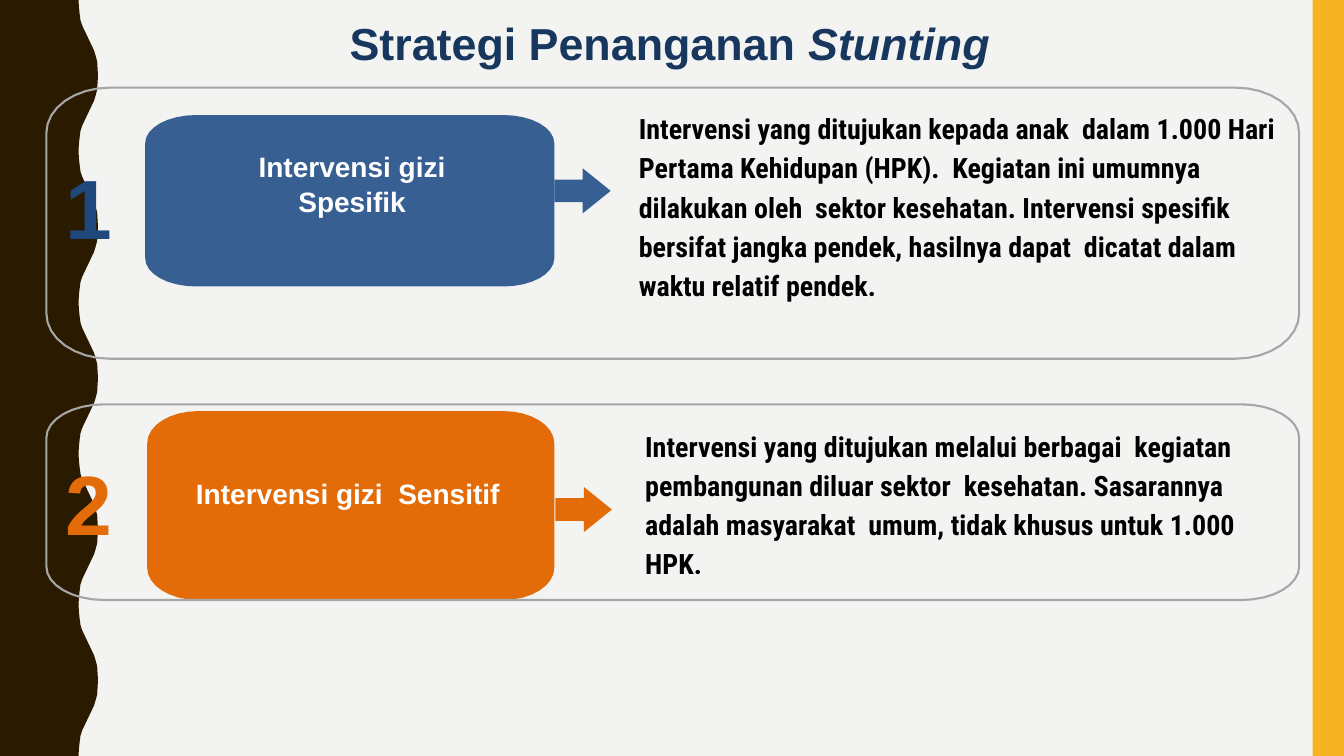
from dataclasses import dataclass
from math import cos, pi, sin

from pptx import Presentation
from pptx.dml.color import RGBColor
from pptx.enum.shapes import MSO_SHAPE as Preset
from pptx.enum.text import MSO_ANCHOR as Anchor, MSO_AUTO_SIZE as AutoSize, PP_ALIGN as Align
from pptx.util import Cm, Pt

WIDTH, HEIGHT = 33.87, 19.05
COLORS = {
    "background": "F3F3F2", "wave": "2A1A00", "band": "F8B323",
    "title": "17375E", "frame": "A6A6A6", "label": "FFFFFF", "body": "000000",
    "specific": "375F92", "specific_number": "1F487C", "sensitive": "E36C09",
}
HALF_WAVE = [(1.98, 0), (1.99, 0.18), (2.01, 0.36), (2.03, 0.51), (2.07, 0.64),
             (2.37, 1.27), (2.41, 1.4), (2.45, 1.55), (2.46, 1.73), (2.47, 1.9)]
WAVE_PERIOD = 3.81
WAVE_COUNT = 5


@dataclass
class Strategy:
    """Content of one strategy and its parts' boxes relative to the frame."""
    number: str
    label: list
    description: str
    color: str
    number_color: str
    frame_radii: tuple
    card_radii: tuple
    card: tuple
    arrow: tuple
    label_box: tuple
    description_box: tuple
    number_box: tuple


STRATEGIES = [
    ((1.17, 2.21, 31.57, 6.83), Strategy(
        "1", ["Intervensi gizi", "Spesifik"],
        "Intervensi yang ditujukan kepada anak  dalam 1.000 Hari Pertama Kehidupan "
        "(HPK).  Kegiatan ini umumnya dilakukan oleh  sektor kesehatan. Intervensi "
        "spesifik  bersifat jangka pendek, hasilnya dapat  dicatat dalam waktu "
        "relatif pendek.",
        "specific", "specific_number", (1.6, 1.14), (1.28, 0.71),
        card=(2.49, 0.69, 10.31, 4.32), arrow=(12.8, 2.03, 1.42, 1.14),
        label_box=(2.03, 1.52, 11.35, 2.62),
        description_box=(14.93, 0.43, 16.2, 6.05),
        number_box=(0.48, 1.68, 1.68, 2.62))),
    ((1.17, 10.19, 31.57, 4.93), Strategy(
        "2", ["Intervensi gizi  Sensitif"],
        "Intervensi yang ditujukan melalui berbagai  kegiatan pembangunan diluar "
        "sektor  kesehatan. Sasarannya adalah masyarakat  umum, tidak khusus untuk "
        "1.000 HPK.",
        "sensitive", "sensitive", (1.45, 0.84), (1.28, 0.81),
        card=(2.54, 0.17, 10.26, 4.76), arrow=(12.83, 2.08, 1.42, 1.14),
        label_box=(3.14, 1.77, 8.92, 0.89),
        description_box=(15.09, 0.45, 15.8, 4.04),
        number_box=(0.48, 1.16, 1.68, 2.59))),
]


def rgb(name):
    """Return the named palette colour."""
    return RGBColor.from_string(COLORS[name])


def paint(shape, color):
    """Give a shape a plain fill without outline or shadow."""
    shape.shadow.inherit = False
    shape.fill.solid()
    shape.fill.fore_color.rgb = rgb(color)
    shape.line.fill.background()


def add_outline(slide, points):
    """Add a closed outline through points given in centimetres."""
    start, *rest = [(Cm(x), Cm(y)) for x, y in points]
    builder = slide.shapes.build_freeform(*start, scale=1.0)
    builder.add_line_segments(rest, close=True)
    return builder.convert_to_shape()


def add_rounded(slide, box, radii, steps=8):
    """Add a box with elliptical corners."""
    left, top, width, height = box
    rx, ry = radii
    near_x, far_x = left + rx, left + width - rx
    near_y, far_y = top + ry, top + height - ry
    centers = [(far_x, near_y), (far_x, far_y), (near_x, far_y), (near_x, near_y)]
    points = []
    for corner, (x, y) in enumerate(centers):
        for step in range(steps + 1):
            angle = (corner - 1 + step / steps) * pi / 2
            points.append((x + rx * cos(angle), y + ry * sin(angle)))
    return add_outline(slide, points)


def set_frame(text_frame, top_inset):
    """Set wrapping, anchoring and insets of a text frame."""
    text_frame.word_wrap = True
    text_frame.auto_size = AutoSize.NONE
    text_frame.vertical_anchor = Anchor.TOP
    text_frame.margin_left = text_frame.margin_right = text_frame.margin_bottom = 0
    text_frame.margin_top = Cm(top_inset)


def format_paragraph(paragraph, font, size, color, align=Align.LEFT, before=1.1, spacing=1.0):
    """Format a bold paragraph."""
    paragraph.alignment = align
    paragraph.space_before = Pt(before)
    paragraph.line_spacing = spacing
    paragraph.font.name = font
    paragraph.font.size = Pt(size)
    paragraph.font.bold = True
    paragraph.font.color.rgb = rgb(color)


def add_text(slide, box, lines, font, size, color, top_inset=0.04, **layout):
    """Add a text box with one paragraph per line."""
    text_frame = slide.shapes.add_textbox(*map(Cm, box)).text_frame
    set_frame(text_frame, top_inset)
    text_frame.text = "\n".join(lines)
    for paragraph in text_frame.paragraphs:
        format_paragraph(paragraph, font, size, color, **layout)


def add_backdrop(slide, box):
    """Draw the background, the wavy left edge and the right band."""
    left, top, width, height = box
    slide.background.fill.solid()
    slide.background.fill.fore_color.rgb = rgb("background")
    wave = HALF_WAVE + [(x, WAVE_PERIOD - y) for x, y in reversed(HALF_WAVE[1:])]
    edge = [(left + x, top + y + period * WAVE_PERIOD)
            for period in range(WAVE_COUNT) for x, y in wave]
    edge.append((left + HALF_WAVE[0][0], top + height))
    paint(add_outline(slide, [(left, top), *edge, (left, top + height)]), "wave")
    band_width = 0.79
    band = slide.shapes.add_shape(Preset.RECTANGLE, Cm(left + width - band_width), Cm(top),
                                  Cm(band_width), Cm(height))
    paint(band, "band")


def add_title(slide, box):
    """Place and format the slide title."""
    title = slide.shapes.title
    title.left, title.top, title.width, title.height = map(Cm, box)
    set_frame(title.text_frame, 0.04)
    heading = title.text_frame.paragraphs[0]
    heading.add_run().text = "Strategi Penanganan "
    term = heading.add_run()
    term.text = "Stunting"
    term.font.italic = True
    format_paragraph(heading, "Arial", 32, "title")


def add_strategy(slide, box, strategy):
    """Draw one strategy inside its frame box."""
    left, top = box[:2]

    def place(part):
        """Shift a part's box from the frame to the slide."""
        x, y, width, height = part
        return left + x, top + y, width, height

    arrow = slide.shapes.add_shape(Preset.RIGHT_ARROW, *map(Cm, place(strategy.arrow)))
    arrow.adjustments[0] = 0.5
    arrow.adjustments[1] = 0.62
    paint(arrow, strategy.color)
    paint(add_rounded(slide, place(strategy.card), strategy.card_radii), strategy.color)
    add_text(slide, place(strategy.label_box), strategy.label, "Arial", 20, "label",
             align=Align.CENTER)
    add_text(slide, place(strategy.description_box), [strategy.description],
             "Roboto Condensed", 20, "body", top_inset=0.03, spacing=1.17)
    frame = add_rounded(slide, box, strategy.frame_radii)
    frame.shadow.inherit = False
    frame.fill.background()
    frame.line.color.rgb = rgb("frame")
    frame.line.width = Pt(1.5)
    add_text(slide, place(strategy.number_box), [strategy.number], "Arial", 60,
             strategy.number_color)


def main():
    """Build and save the slide."""
    deck = Presentation()
    deck.slide_width, deck.slide_height = Cm(WIDTH), Cm(HEIGHT)
    slide = deck.slides.add_slide(deck.slide_layouts[5])
    add_backdrop(slide, (0, 0, WIDTH, HEIGHT))
    add_title(slide, (8.81, 0.36, 22.81, 1.4))
    for box, strategy in STRATEGIES:
        add_strategy(slide, box, strategy)
    deck.save("out.pptx")


if __name__ == "__main__":
    main()
